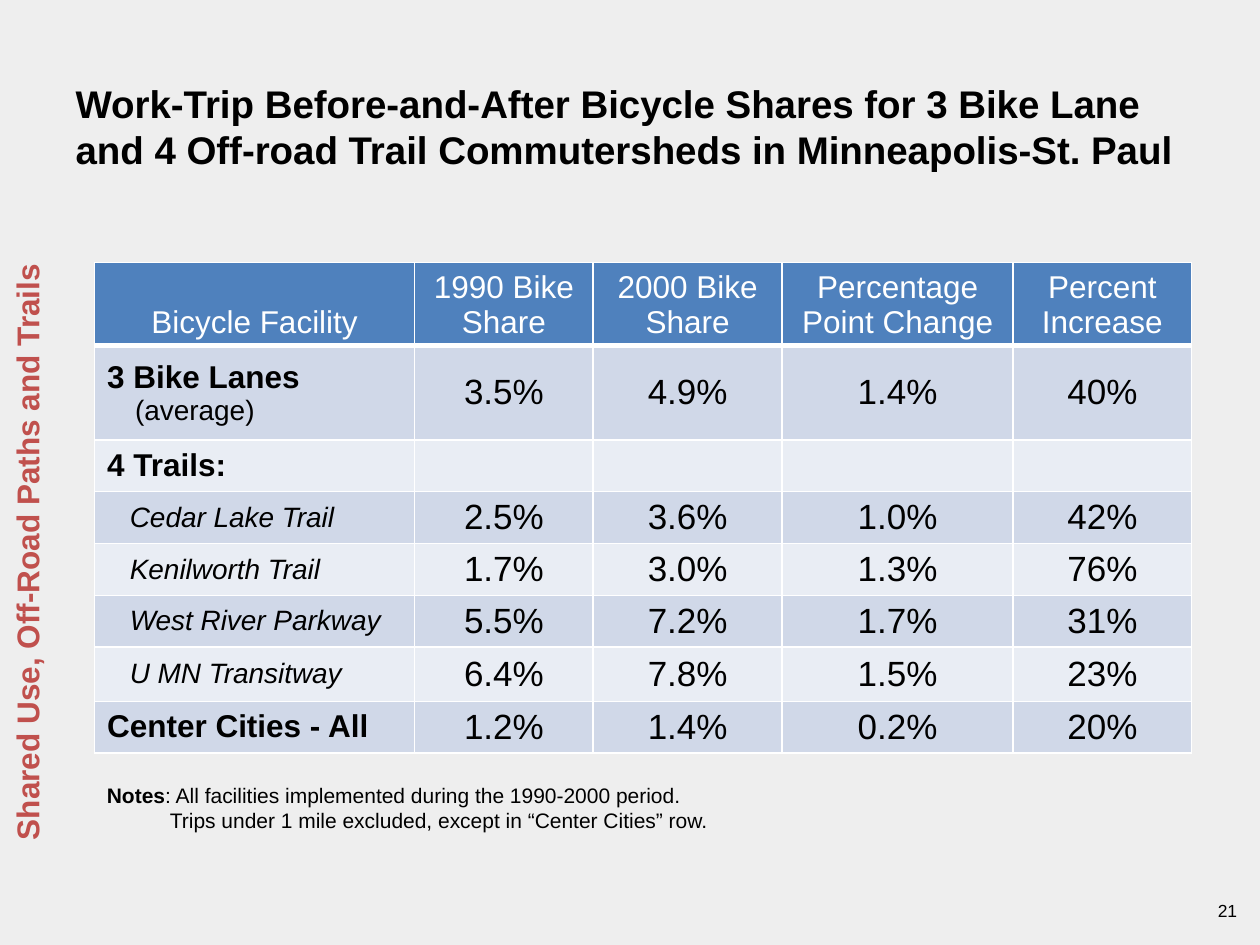
import dataclasses

import lxml.etree
import pptx
import pptx.dml.color
import pptx.enum.text
import pptx.oxml.ns
import pptx.util

Pt = pptx.util.Pt
Align = pptx.enum.text.PP_ALIGN
Anchor = pptx.enum.text.MSO_ANCHOR


@dataclasses.dataclass(frozen=True)
class Theme:
    font: str = "Arial"
    background: str = "EEEEEE"
    ink: str = "000000"
    white: str = "FFFFFF"
    accent: str = "C0504D"
    header: str = "4F81BD"
    bands: tuple = ("D0D8E8", "E9EDF4")
    title: int = 22
    value: int = 20
    label: int = 18
    detail: int = 16
    note: int = 12
    number: int = 10


def rgb(code):
    return pptx.dml.color.RGBColor.from_string(code)


class SlideBuilder:
    def __init__(self, deck, theme):
        self.theme = theme
        self.page = deck.slides.add_slide(deck.slide_layouts[5])
        fill = self.page.background.fill
        fill.solid()
        fill.fore_color.rgb = rgb(theme.background)

    def add_run(self, para, text, size, bold=False, italic=False, color=None):
        span = para.add_run()
        span.text = text
        font = span.font
        font.name, font.size = self.theme.font, Pt(size)
        font.bold, font.italic = bold, italic
        font.color.rgb = rgb(color or self.theme.ink)

    def indent(self, para, left, first=0):
        properties = para._p.get_or_add_pPr()
        properties.set("marL", str(Pt(left)))
        properties.set("indent", str(Pt(first)))

    def title(self, text, left, top, width, height):
        box = self.page.shapes.title
        box.left, box.top, box.width, box.height = map(Pt, (left, top, width, height))
        frame = box.text_frame
        frame.auto_size = pptx.enum.text.MSO_AUTO_SIZE.NONE
        frame.vertical_anchor = Anchor.BOTTOM
        para = frame.paragraphs[0]
        para.alignment = Align.LEFT
        self.add_run(para, text, self.theme.title, bold=True)

    def text(self, left, top, width, height, align=Align.LEFT, rotation=0):
        box = self.page.shapes.add_textbox(*map(Pt, (left, top, width, height)))
        box.rotation = rotation
        box.text_frame.word_wrap = True
        box.text_frame.paragraphs[0].alignment = align
        return box.text_frame

    def border(self, cell, bottom=1):
        properties = cell._tc.get_or_add_tcPr()
        qn = pptx.oxml.ns.qn
        for side, width in (("L", 1), ("R", 1), ("T", 1), ("B", bottom)):
            line = lxml.etree.SubElement(properties, qn("a:ln" + side), w=str(Pt(width)))
            solid = lxml.etree.SubElement(line, qn("a:solidFill"))
            lxml.etree.SubElement(solid, qn("a:srgbClr"), val=self.theme.white)

    def cell(self, cell, fill, anchor=Anchor.MIDDLE, align=Align.CENTER, bottom=1):
        self.border(cell, bottom)
        cell.fill.solid()
        cell.fill.fore_color.rgb = rgb(fill)
        cell.vertical_anchor = anchor
        cell.margin_top = cell.margin_bottom = Pt(3)
        para = cell.text_frame.paragraphs[0]
        para.alignment = align
        return para

    def facility(self, para, name, kind):
        theme = self.theme
        if kind == "trail":
            self.indent(para, 13)
            self.add_run(para, name, theme.detail, italic=True)
            return
        self.add_run(para, name, theme.label, bold=True)
        if kind == "average":
            self.indent(para, 16, -16)
            self.add_run(para, "(average)", theme.detail)

    def share_table(self, left, top, widths, heights, headings, rows):
        theme = self.theme
        table = self.page.shapes.add_table(
            len(heights), len(widths), Pt(left), Pt(top),
            Pt(sum(widths)), Pt(sum(heights))).table
        for column, width in zip(table.columns, widths):
            column.width = Pt(width)
        for row, height in zip(table.rows, heights):
            row.height = Pt(height)

        # Header row
        for cell, heading in zip(table.rows[0].cells, headings):
            para = self.cell(cell, theme.header, Anchor.BOTTOM, bottom=3)
            cell.margin_left = cell.margin_right = Pt(5)
            self.add_run(para, heading, theme.label, color=theme.white)

        # Body rows in alternating bands
        for index, (name, kind, values) in enumerate(rows):
            band = theme.bands[index % 2]
            first, *others = table.rows[index + 1].cells
            self.facility(self.cell(first, band, align=Align.LEFT), name, kind)
            for cell, value in zip(others, values):
                para = self.cell(cell, band)
                if value:
                    self.add_run(para, value, theme.value)


HEADINGS = ["Bicycle Facility", "1990 Bike Share", "2000 Bike Share",
            "Percentage Point Change", "Percent Increase"]
ROWS = [
    ("3 Bike Lanes ", "average", ["3.5%", "4.9%", "1.4%", "40%"]),
    ("4 Trails:", "group", [""] * 4),
    ("Cedar Lake Trail", "trail", ["2.5%", "3.6%", "1.0%", "42%"]),
    ("Kenilworth Trail", "trail", ["1.7%", "3.0%", "1.3%", "76%"]),
    ("West River Parkway", "trail", ["5.5%", "7.2%", "1.7%", "31%"]),
    ("U MN Transitway", "trail", ["6.4%", "7.8%", "1.5%", "23%"]),
    ("Center Cities - All", "group", ["1.2%", "1.4%", "0.2%", "20%"]),
]


def main():
    theme = Theme()
    deck = pptx.Presentation()
    deck.slide_width, deck.slide_height = Pt(720), Pt(540)
    slide = SlideBuilder(deck, theme)

    # Title
    slide.title("Work-Trip Before-and-After Bicycle Shares for 3 Bike Lane and "
                "4 Off-road Trail Commutersheds in Minneapolis-St. Paul",
                36, 12, 648, 90)

    # Table of bicycle shares
    slide.share_table(54, 150, [183, 102, 108, 132, 102],
                      [47.4, 54] + [29.6] * 4 + [31, 29.4], HEADINGS, ROWS)

    # Notes
    notes = slide.text(54, 443.5, 642, 36)
    para = notes.paragraphs[0]
    slide.add_run(para, "Notes", theme.note, bold=True)
    slide.add_run(para, ": All facilities implemented during the 1990-2000 period.", theme.note)
    para = notes.add_paragraph()
    slide.indent(para, 36)
    slide.add_run(para, "Trips under 1 mile excluded, except in “Center Cities” row.", theme.note)

    # Section name along the left edge
    section = slide.text(-170.6, 286.6, 372, 29, rotation=270)
    slide.add_run(section.paragraphs[0], "Shared Use, Off-Road Paths and Trails",
                  theme.label, bold=True, color=theme.accent)

    # Page number
    number = slide.text(546, 511, 168, 29, align=Align.RIGHT)
    slide.add_run(number.paragraphs[0], "21", theme.number)

    deck.save("out.pptx")


if __name__ == "__main__":
    main()
